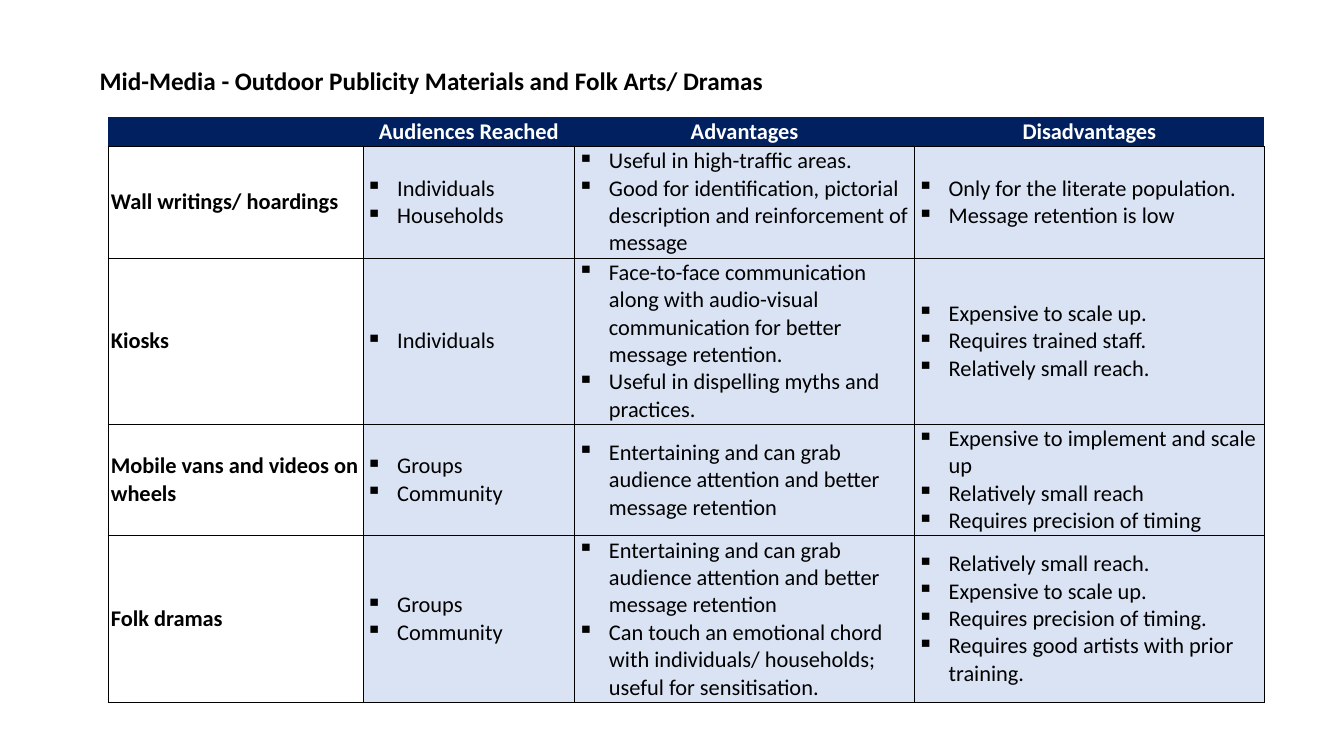
import pptx
import pptx.dml.color
import pptx.enum.text
import pptx.oxml
import pptx.oxml.ns
import pptx.util
from lxml import etree

Inches = pptx.util.Inches
qn = pptx.oxml.ns.qn
ALIGN = pptx.enum.text.PP_ALIGN
FONT = "Calibri"
COLORS = {"text": "000000", "header": "002060", "header_text": "FFFFFF",
          "body": "DAE3F3", "border": "000000"}
NO_STYLE = "{2D5ABB26-0587-4C30-8999-92F81FD0307C}"

TITLE = "Mid-Media - Outdoor Publicity Materials and Folk Arts/ Dramas"
HEADERS = ["", "Audiences Reached", "Advantages", "Disadvantages"]
COL_WIDTHS = [2.53, 2.1, 3.37, 3.47]
ROW_HEIGHTS = [0.29, 1.1, 1.63, 1.1, 1.63]
MEDIA = [
    ("Wall writings/ hoardings",
     ["Individuals", "Households"],
     ["Useful in high-traffic areas.",
      "Good for identification, pictorial description and reinforcement of message"],
     ["Only for the literate population.", "Message retention is low"]),
    ("Kiosks",
     ["Individuals"],
     ["Face-to-face communication along with audio-visual communication "
      "for better message retention.",
      "Useful in dispelling myths and practices."],
     ["Expensive to scale up.", "Requires trained staff.", "Relatively small reach."]),
    ("Mobile vans and videos on wheels",
     ["Groups", "Community"],
     ["Entertaining and can grab audience attention and better message retention"],
     ["Expensive to implement and scale up", "Relatively small reach",
      "Requires precision of timing"]),
    ("Folk dramas",
     ["Groups", "Community"],
     ["Entertaining and can grab audience attention and better message retention",
      "Can touch an emotional chord with individuals/ households; "
      "useful for sensitisation."],
     ["Relatively small reach.", "Expensive to scale up.",
      "Requires precision of timing.",
      "Requires good artists with prior training."]),
]


def write(tf, lines, size=16, bold=False, color="text", align=ALIGN.LEFT, bullet=None):
    for i, line in enumerate(lines):
        p = tf.paragraphs[0] if i == 0 else tf.add_paragraph()
        p.alignment = align
        if bullet:
            pPr = p._p.get_or_add_pPr()
            pPr.set("marL", str(Inches(0.31)))
            pPr.set("indent", str(-Inches(0.31)))
            etree.SubElement(pPr, qn("a:buChar")).set("char", bullet)
        if not line:
            end = etree.SubElement(p._p, qn("a:endParaRPr"))
            end.set("sz", str(size * 100))
            continue
        r = p.add_run()
        r.text = line
        r.font.name = FONT
        r.font.size = pptx.util.Pt(size)
        r.font.bold = bold
        r.font.color.rgb = pptx.dml.color.RGBColor.from_string(COLORS[color])


def set_borders(cell, sides):
    tcPr = cell._tc.get_or_add_tcPr()
    for side in "LRTB":
        ln = etree.SubElement(tcPr, qn("a:ln" + side))
        if side in sides:
            ln.set("w", str(pptx.util.Pt(0.5)))
            fill = etree.SubElement(ln, qn("a:solidFill"))
            etree.SubElement(fill, qn("a:srgbClr")).set("val", COLORS["border"])
        else:
            etree.SubElement(ln, qn("a:noFill"))


def fill_cell(cell, lines, sides="LRTB", fill=None, **fmt):
    cell.margin_left = cell.margin_right = Inches(0.03)
    cell.margin_top = cell.margin_bottom = Inches(0.01)
    cell.vertical_anchor = pptx.enum.text.MSO_ANCHOR.MIDDLE
    set_borders(cell, sides)
    if fill:
        cell.fill.solid()
        cell.fill.fore_color.rgb = pptx.dml.color.RGBColor.from_string(COLORS[fill])
    else:
        cell.fill.background()
    write(cell.text_frame, lines, **fmt)


def add_title(slide, left, top, width, height):
    sp = slide.shapes.add_textbox(Inches(left), Inches(top), Inches(width), Inches(height))
    tf = sp.text_frame
    tf.word_wrap = False
    tf.auto_size = pptx.enum.text.MSO_AUTO_SIZE.SHAPE_TO_FIT_TEXT
    write(tf, [TITLE], size=18, bold=True)


def add_media_table(slide, left, top, width, height):
    frame = slide.shapes.add_table(len(ROW_HEIGHTS), len(COL_WIDTHS), Inches(left),
                                   Inches(top), Inches(width), Inches(height))
    table = frame.table
    table.horz_banding = False
    table._tbl.tblPr.find(qn("a:tableStyleId")).text = NO_STYLE
    for column, share in zip(table.columns, COL_WIDTHS):
        column.width = Inches(width * share / sum(COL_WIDTHS))
    for row, share in zip(table.rows, ROW_HEIGHTS):
        row.height = Inches(height * share / sum(ROW_HEIGHTS))
    for c, header in enumerate(HEADERS):
        fill_cell(table.cell(0, c), [header], sides="B", fill="header",
                  bold=True, color="header_text", align=ALIGN.CENTER)
    for r, (medium, *points) in enumerate(MEDIA, start=1):
        fill_cell(table.cell(r, 0), [medium], bold=True)
        for c, lines in enumerate(points, start=1):
            fill_cell(table.cell(r, c), lines, fill="body", bullet="▪")


def main():
    prs = pptx.Presentation()
    prs.slide_width = Inches(13.33)
    prs.slide_height = Inches(7.5)
    slide = prs.slides.add_slide(prs.slide_layouts[6])
    add_media_table(slide, 1.07, 1.16, 11.47, 5.75)
    add_title(slide, 0.89, 0.6, 6.84, 0.4)
    prs.save("out.pptx")


if __name__ == "__main__":
    main()
